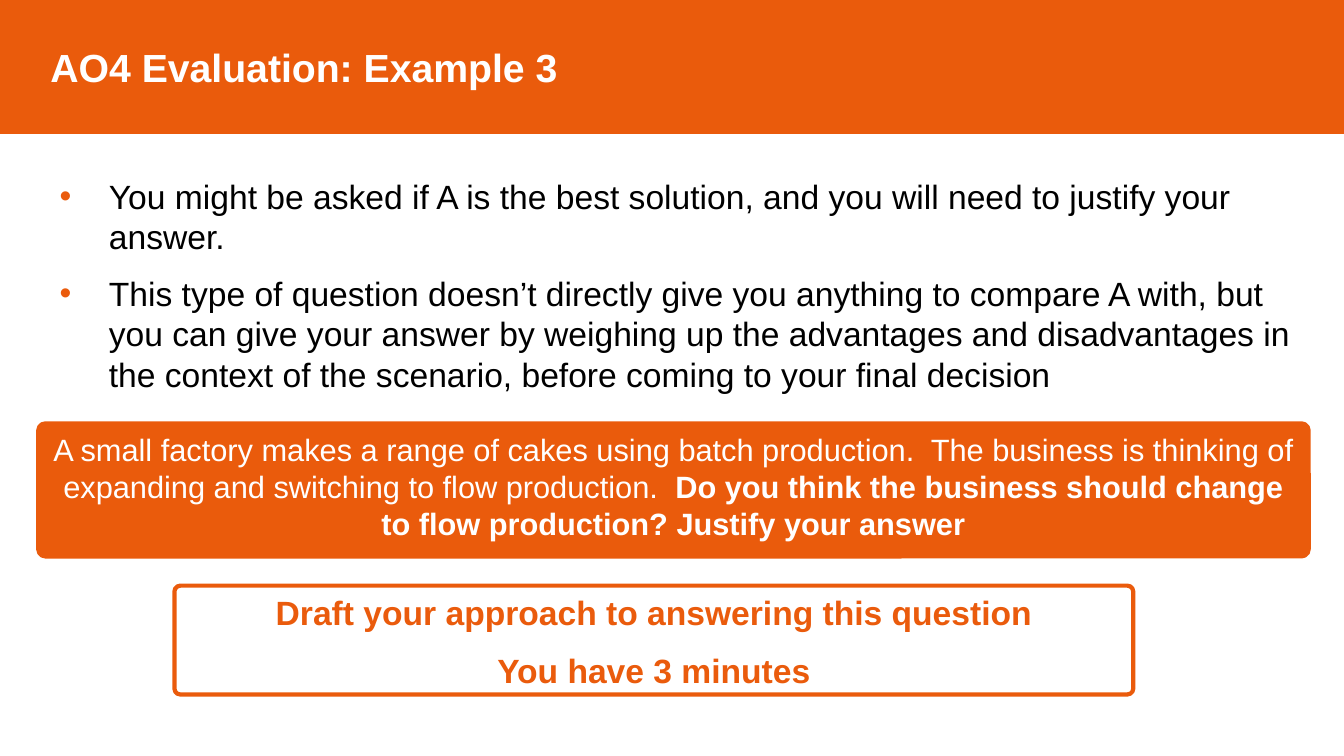
from dataclasses import dataclass

from lxml.etree import SubElement
from pptx import Presentation
from pptx.dml.color import RGBColor
from pptx.enum.shapes import MSO_SHAPE
from pptx.enum.text import MSO_ANCHOR, MSO_AUTO_SIZE, PP_ALIGN
from pptx.oxml.ns import qn
from pptx.util import Inches, Pt

ORANGE, WHITE, BLACK = "EA5B0C", "FFFFFF", "000000"
WIDTH, HEIGHT = 13.33, 7.5
BAND = 1.32
HANG = 0.49

TITLE = "AO4 Evaluation: Example 3"
POINTS = [
    "You might be asked if A is the best solution, and you will need to justify your answer.",
    "This type of question doesn’t directly give you anything to compare A with, but you can "
    "give your answer by weighing up the advantages and disadvantages in the context of the "
    "scenario, before coming to your final decision",
]


@dataclass
class Run:
    text: str
    bold: bool = False


@dataclass
class Panel:
    left: float
    top: float
    width: float
    height: float
    lines: list[list[Run]]
    size: int
    color: str
    fill: str | None = None
    after: int = 0


PANELS = [
    Panel(0.38, 4.2, 12.6, 1.32, [[
        Run("A small factory makes a range of cakes using batch production.  The business is "
            "thinking of expanding and switching to flow production.  "),
        Run("Do you think the business should change to flow production? Justify your answer",
            True),
    ]], 22, WHITE, fill=ORANGE),
    Panel(1.73, 5.81, 9.51, 1.08, [
        [Run("Draft your approach to answering this question", True)],
        [Run("You have 3 minutes", True)],
    ], 24, ORANGE, after=12),
]


def rgb(code: str) -> RGBColor:
    return RGBColor.from_string(code)


def place(shape, left: float, top: float, width: float, height: float) -> None:
    shape.left, shape.top = Inches(left), Inches(top)
    shape.width, shape.height = Inches(width), Inches(height)


def paint(shape, fill: str | None, weight: int) -> None:
    if fill:
        shape.fill.solid()
        shape.fill.fore_color.rgb = rgb(fill)
    else:
        shape.fill.background()
    shape.line.color.rgb = rgb(ORANGE)
    shape.line.width = Pt(weight)


def write(shape, lines: list[list[Run]], *, size: int, color: str, align=PP_ALIGN.LEFT,
          anchor=MSO_ANCHOR.TOP, after: int = 0) -> None:
    frame = shape.text_frame
    frame.word_wrap = True
    frame.auto_size = MSO_AUTO_SIZE.NONE
    frame.vertical_anchor = anchor
    for i, line in enumerate(lines):
        para = frame.add_paragraph() if i else frame.paragraphs[0]
        para.alignment = align
        para.space_before, para.space_after = Pt(0), Pt(after)
        for item in line:
            run = para.add_run()
            run.text = item.text
            font = run.font
            font.name, font.size, font.bold = "Arial", Pt(size), item.bold
            font.color.rgb = rgb(color)


def bullet(para) -> None:
    props = para._p.get_or_add_pPr()
    props.set("marL", str(Inches(HANG)))
    props.set("indent", str(-Inches(HANG)))
    tint = SubElement(props, qn("a:buClr"))
    SubElement(tint, qn("a:srgbClr"), val=ORANGE)
    SubElement(props, qn("a:buFont"), typeface="Arial")
    SubElement(props, qn("a:buChar"), char="•")


def add_panel(slide, panel: Panel) -> None:
    shape = slide.shapes.add_shape(
        MSO_SHAPE.ROUNDED_RECTANGLE, Inches(panel.left), Inches(panel.top),
        Inches(panel.width), Inches(panel.height))
    shape.adjustments[0] = 0.054
    shape.shadow.inherit = False
    paint(shape, panel.fill, 3)
    write(shape, panel.lines, size=panel.size, color=panel.color,
          align=PP_ALIGN.CENTER, after=panel.after)


def main() -> None:
    deck = Presentation()
    deck.slide_width, deck.slide_height = Inches(WIDTH), Inches(HEIGHT)
    slide = deck.slides.add_slide(deck.slide_layouts[1])

    title = slide.shapes.title
    place(title, 0, 0, WIDTH, BAND)
    paint(title, ORANGE, 1)
    title.text_frame.margin_left = Inches(0.5)
    write(title, [[Run(TITLE, True)]], size=28, color=WHITE, anchor=MSO_ANCHOR.MIDDLE)

    body = slide.placeholders[1]
    place(body, 0.49, 1.69, 12.6, 2.86)
    write(body, [[Run(point)] for point in POINTS], size=24, color=BLACK, after=12)
    for para in body.text_frame.paragraphs:
        bullet(para)

    for panel in PANELS:
        add_panel(slide, panel)
    deck.save("out.pptx")


if __name__ == "__main__":
    main()
